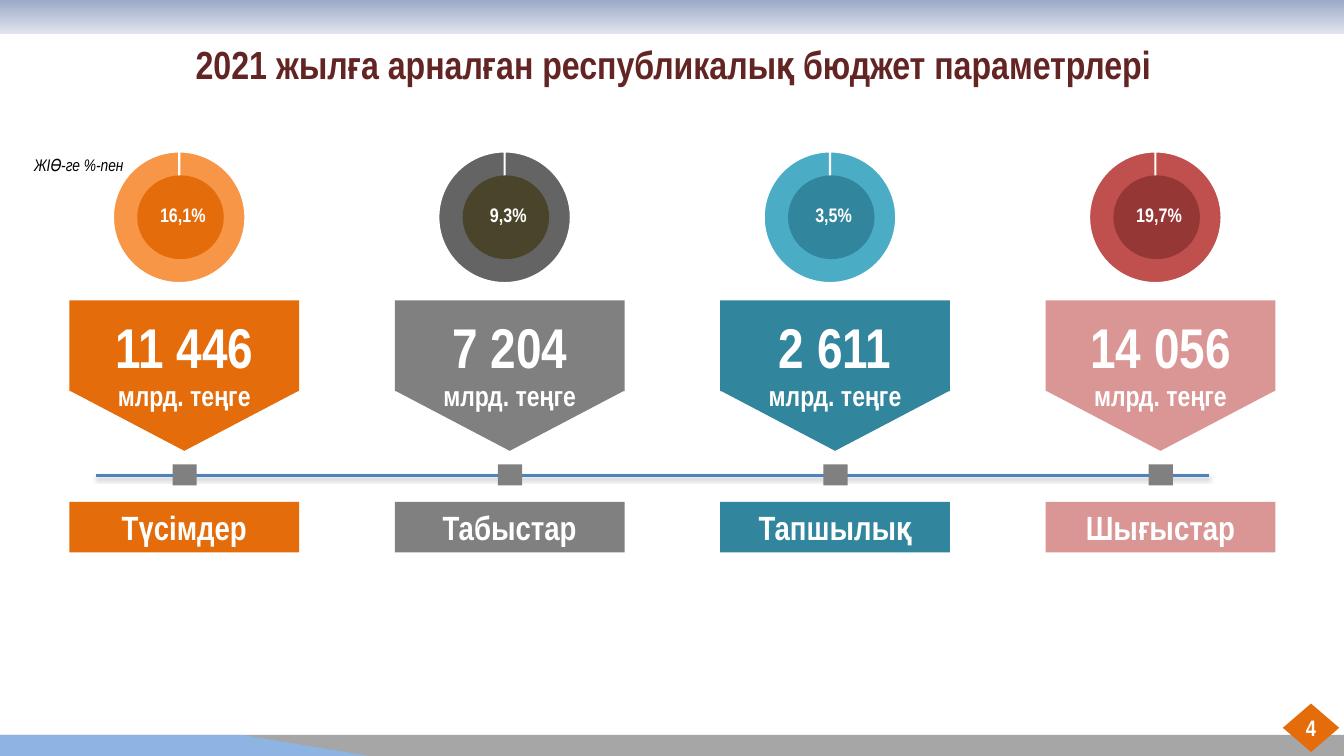
import pptx
import pptx.chart.data
import pptx.dml.color
import pptx.enum.chart
import pptx.enum.shapes
import pptx.enum.text
import pptx.oxml
import pptx.util
from pptx.util import Cm

SHAPE = pptx.enum.shapes.MSO_SHAPE
ALIGN = pptx.enum.text.PP_ALIGN
ANCHOR = pptx.enum.text.MSO_ANCHOR
FONT = "Arial Narrow"
PITCH = 8.2

HUES = {
    "white": "FFFFFF", "black": "000000", "title": "632523",
    "foot": "A6A6A6", "sky": "8EB4E3", "dusk": "9BAAC9", "dawn": "E2E5ED",
    "line": "4F81BD", "orange": "E46C0A", "peach": "F79646",
    "grey": "808080", "slate": "646464", "olive": "4A452A",
    "teal": "31859C", "aqua": "4BACC6",
    "pink": "D99694", "red": "C0504D", "wine": "953735",
}

# share, amount, label, card hue, ring hue, disc hue
ITEMS = [
    ("16,1%", "11 446", "Түсімдер", "orange", "peach", "orange"),
    ("9,3%", "7 204", "Табыстар", "grey", "slate", "olive"),
    ("3,5%", "2 611", "Тапшылық", "teal", "aqua", "teal"),
    ("19,7%", "14 056", "Шығыстар", "pink", "red", "wine"),
]

SHADE = (
    '<a:effectLst xmlns:a="http://schemas.openxmlformats.org/drawingml/2006/main">'
    '<a:outerShdw blurRad="39370" dist="20320" dir="5400000" rotWithShape="0">'
    '<a:srgbClr val="000000"><a:alpha val="38000"/></a:srgbClr>'
    '</a:outerShdw></a:effectLst>'
)
PLOT = (
    '<c:layout xmlns:c="http://schemas.openxmlformats.org/drawingml/2006/chart">'
    '<c:manualLayout><c:layoutTarget val="inner"/>'
    '<c:xMode val="edge"/><c:yMode val="edge"/>'
    '<c:x val="0.184"/><c:y val="0.026"/><c:w val="0.631"/><c:h val="0.974"/>'
    '</c:manualLayout></c:layout>'
)


def tint(name):
    return pptx.dml.color.RGBColor.from_string(HUES[name])


def write(frame, text, size, hue="white", align=ALIGN.CENTER, bold=True, slant=False):
    frame.text = text
    frame.word_wrap = True
    para = frame.paragraphs[0]
    para.alignment = align
    font = para.runs[0].font
    font.name, font.size = FONT, pptx.util.Pt(size)
    font.bold, font.italic = bold, slant
    font.color.rgb = tint(hue)


def add_text(slide, box, text, size, **style):
    frame = slide.shapes.add_textbox(*map(Cm, box)).text_frame
    write(frame, text, size, **style)
    frame.auto_size = pptx.enum.text.MSO_AUTO_SIZE.SHAPE_TO_FIT_TEXT


def add_form(slide, kind, box, hue):
    form = slide.shapes.add_shape(kind, *map(Cm, box))
    form.shadow.inherit = False
    form.fill.solid()
    form.fill.fore_color.rgb = tint(hue)
    form.line.fill.background()
    return form


def add_ring(slide, box, hue):
    """Add a doughnut chart with a single full slice."""
    data = pptx.chart.data.CategoryChartData()
    data.categories = ["1"]
    data.add_series("Series 1", [100])
    kind = pptx.enum.chart.XL_CHART_TYPE.DOUGHNUT
    chart = slide.shapes.add_chart(kind, *map(Cm, box), data).chart
    chart.has_title = chart.has_legend = False
    chart.font.name, chart.font.size = "Calibri", pptx.util.Pt(10)
    chart.font.color.rgb = tint("black")
    plot = chart.plots[0]
    plot.vary_by_categories = False
    slice_ = plot.series[0].points[0].format
    slice_.fill.solid()
    slice_.fill.fore_color.rgb = tint(hue)
    slice_.line.color.rgb = tint("white")
    slice_.line.width = pptx.util.Pt(1.5)
    area = chart._chartSpace.chart.plotArea
    for old in area.xpath("c:layout"):
        area.remove(old)
    area.insert(0, pptx.oxml.parse_xml(PLOT))
    for hole in area.xpath(".//c:holeSize"):
        hole.set("val", "75")


def add_bands(slide):
    """Add the bands along the top and foot of the slide."""
    add_form(slide, SHAPE.RECTANGLE, (0, 18.52, 33.87, 0.53), "foot")
    top = add_form(slide, SHAPE.RECTANGLE, (0, 0, 33.87, 0.86), "dusk")
    top.fill.gradient()
    top.fill.gradient_angle = 270
    for stop, hue in zip(top.fill.gradient_stops, ("dusk", "dawn")):
        stop.color.rgb = tint(hue)
    add_form(slide, SHAPE.RECTANGLE, (0, 18.52, 6.12, 0.53), "sky")
    add_form(slide, SHAPE.RIGHT_TRIANGLE, (6.1, 18.52, 3.2, 0.53), "sky")


def add_axis(slide):
    kind = pptx.enum.shapes.MSO_CONNECTOR.STRAIGHT
    axis = slide.shapes.add_connector(kind, Cm(2.41), Cm(11.99), Cm(30.48), Cm(11.99))
    axis.line.color.rgb = tint("line")
    axis.line.width = pptx.util.Pt(2)
    axis._element.spPr.append(pptx.oxml.parse_xml(SHADE))


def add_item(slide, left, item):
    """Add one column: ring, card, knot on the axis and label."""
    share, sum_, label, card, ring, disc = item
    add_ring(slide, (left, 3.73, 5.54, 3.43), ring)
    add_form(slide, SHAPE.OVAL, (left + 1.71, 4.42, 2.18, 2.11), disc)
    add_text(slide, (left + 1.86, 5, 2, 0.86), share, 14)
    add_form(slide, SHAPE.RECTANGLE, (left, 7.57, 5.79, 2.29), card)
    tip = add_form(slide, SHAPE.ISOSCELES_TRIANGLE, (left, 9.84, 5.79, 1.52), card)
    tip.rotation = 180
    add_text(slide, (left + 0.7, 7.74, 4.39, 1.96), sum_, 40)
    add_text(slide, (left + 0.7, 9.42, 4.39, 1.12), "млрд. теңге", 20)
    add_form(slide, SHAPE.RECTANGLE, (left + 2.6, 11.7, 0.61, 0.53), "grey")
    base = add_form(slide, SHAPE.RECTANGLE, (left, 12.65, 5.79, 1.27), card)
    write(base.text_frame, label, 24)
    base.text_frame.vertical_anchor = ANCHOR.MIDDLE


def add_page(slide):
    page = add_form(slide, SHAPE.FLOWCHART_DECISION, (32.33, 17.73, 1.42, 1.22), "orange")
    frame = page.text_frame
    write(frame, "4", 16)
    frame.margin_left = frame.margin_right = 0
    frame.margin_top = frame.margin_bottom = 0
    frame.vertical_anchor = ANCHOR.MIDDLE


def main():
    deck = pptx.Presentation()
    deck.slide_width, deck.slide_height = Cm(33.87), Cm(19.05)
    slide = deck.slides.add_slide(deck.slide_layouts[6])
    add_bands(slide)
    add_text(slide, (0, 0.89, 33.93, 1.45),
             "2021 жылға арналған республикалық бюджет параметрлері", 28, hue="title")
    add_axis(slide)
    for i, item in enumerate(ITEMS):
        add_item(slide, 1.75 + i * PITCH, item)
    add_text(slide, (0.61, 3.78, 2.97, 0.76), "ЖІӨ-ге %-пен", 12,
             hue="black", align=ALIGN.JUSTIFY, bold=False, slant=True)
    add_page(slide)
    deck.save("out.pptx")


if __name__ == "__main__":
    main()
